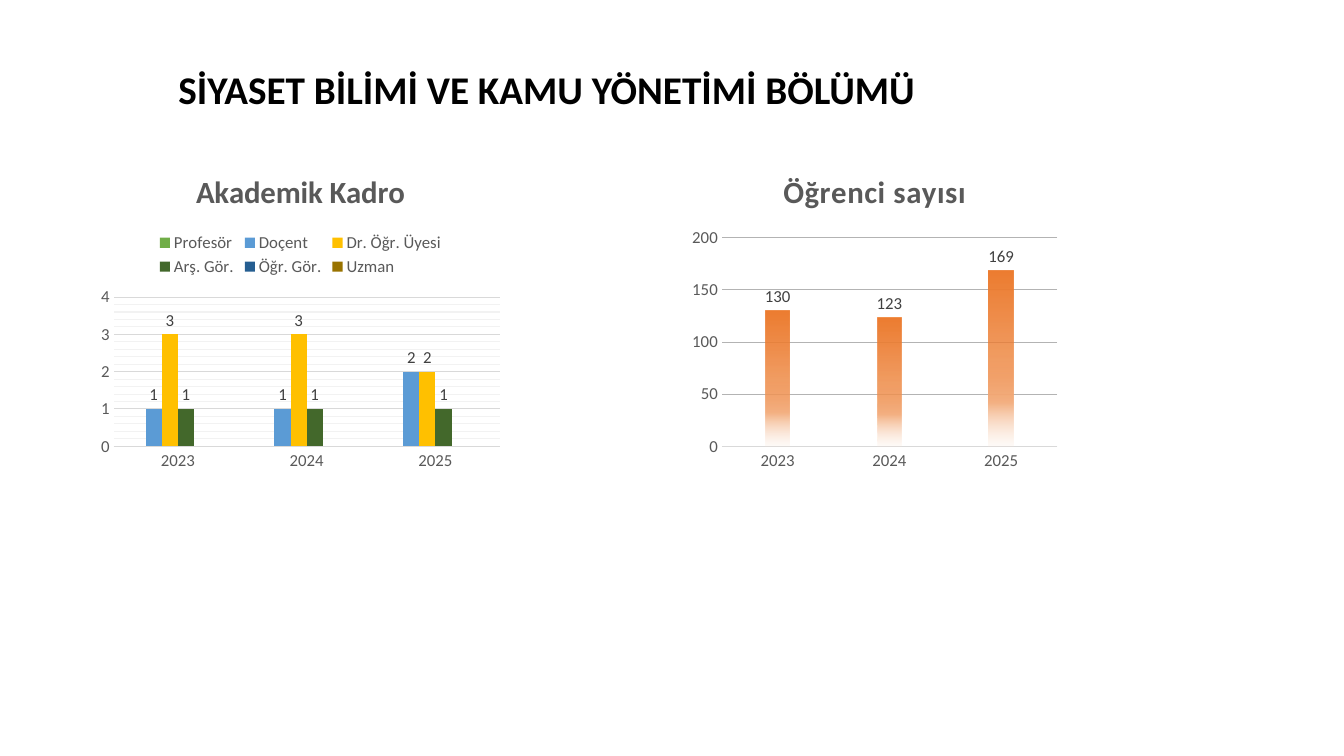
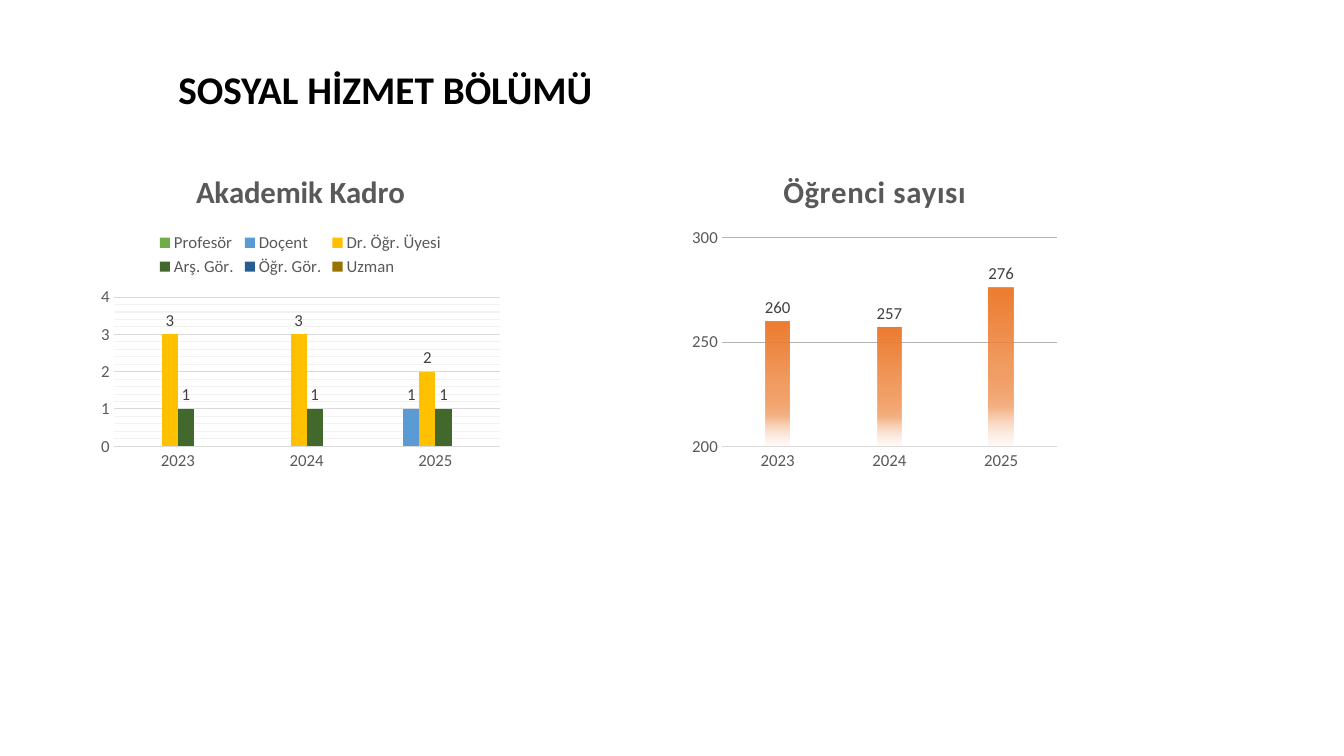
from lxml import etree
from pptx import Presentation
from pptx import util as u
from pptx.chart.data import CategoryChartData
from pptx.dml.color import RGBColor
from pptx.enum import chart as charts, text
from pptx.oxml.ns import qn

FONT = "Calibri"
COLORS = {
    "title": "000000", "axis_text": "595959", "label": "404040",
    "line": "D9D9D9", "minor": "F2F2F2", "student_grid": "B3B3B3",
}
STAFF_COLORS = {
    "Profesör": "70AD47", "Doçent": "5B9BD5", "Dr. Öğr. Üyesi": "FFC000",
    "Arş. Gör.": "43682B", "Öğr. Gör.": "255E91", "Uzman": "997300",
}
# position %, colour, opacity %
STUDENT_GRADIENT = [(0, "ED7D31", 100), (51, "ED7D31", 75),
                    (75, "F4B183", 100), (100, "FBE5D6", 15)]
YEARS = ["2023", "2024", "2025"]
DEPARTMENTS = [
    {"title": "SİYASET BİLİMİ VE KAMU YÖNETİMİ BÖLÜMÜ",
     "staff": {"Doçent": [1, 1, 2], "Dr. Öğr. Üyesi": [3, 3, 2], "Arş. Gör.": [1, 1, 1]},
     "students": [130, 123, 169], "student_range": (0, 200)},
    {"title": "SOSYAL HİZMET BÖLÜMÜ",
     "staff": {"Doçent": [None, None, 1], "Dr. Öğr. Üyesi": [3, 3, 2], "Arş. Gör.": [1, 1, 1]},
     "students": [260, 257, 276], "student_range": (200, 300)},
]


def set_font(font, size, color, bold=False):
    for name, value in {"name": FONT, "size": u.Pt(size), "bold": bold}.items():
        setattr(font, name, value)
    font.color.rgb = RGBColor.from_string(COLORS[color])


def add_columns(page, left, width, heading, series, value_range, step, grid, gap, overlap):
    """Add a titled, labelled column chart and return it."""
    data = CategoryChartData()
    data.categories = YEARS
    for name, values in series.items():
        data.add_series(name, values)
    chart = page.shapes.add_chart(
        charts.XL_CHART_TYPE.COLUMN_CLUSTERED, u.Inches(left), u.Inches(1.52),
        u.Inches(width), u.Inches(3.21), data).chart
    set_font(chart.font, 10, "title")

    chart.has_title = True
    span = chart.chart_title.text_frame.paragraphs[0].add_run()
    span.text = heading
    set_font(span.font, 22, "axis_text", bold=True)

    for axis in (chart.category_axis, chart.value_axis):
        axis.major_tick_mark = axis.minor_tick_mark = charts.XL_TICK_MARK.NONE
        set_font(axis.tick_labels.font, 12, "axis_text")
    base_line = chart.category_axis.format.line
    base_line.width = u.Pt(0.75)
    base_line.color.rgb = RGBColor.from_string(COLORS["line"])
    scale = chart.value_axis
    scale.minimum_scale, scale.maximum_scale = value_range
    scale.major_unit = step
    scale.format.line.fill.background()
    grid_line = scale.major_gridlines.format.line
    grid_line.width = u.Pt(0.75)
    grid_line.color.rgb = RGBColor.from_string(COLORS[grid])

    plot = chart.plots[0]
    plot.vary_by_categories = False
    plot.gap_width, plot.overlap = gap, overlap
    for columns in plot.series:
        columns.invert_if_negative = False
        labels = columns.data_labels
        labels.show_value = True
        labels.position = charts.XL_LABEL_POSITION.OUTSIDE_END
        set_font(labels.font, 12, "label")
    return chart


deck = Presentation()
deck.slide_width, deck.slide_height = u.Inches(13.33), u.Inches(7.5)

for department in DEPARTMENTS:
    page = deck.slides.add_slide(deck.slide_layouts[5])
    box = page.shapes.title
    for side, inches in {"left": 1.67, "top": 0.4, "width": 8.08, "height": 1.02}.items():
        setattr(box, side, u.Inches(inches))
    box.text_frame.text = department["title"]
    box.text_frame.vertical_anchor = text.MSO_ANCHOR.MIDDLE
    para = box.text_frame.paragraphs[0]
    para.alignment = text.PP_ALIGN.LEFT
    para.line_spacing = 0.9
    set_font(para.runs[0].font, 28, "title", bold=True)

    staff = {name: department["staff"].get(name, [None] * len(YEARS)) for name in STAFF_COLORS}
    staff_chart = add_columns(page, 0.92, 4.12, "Akademik Kadro", staff,
                              (0, 4), 1, "line", gap=199, overlap=0)
    for columns, color in zip(staff_chart.plots[0].series, STAFF_COLORS.values()):
        columns.format.fill.solid()
        columns.format.fill.fore_color.rgb = RGBColor.from_string(color)
    scale = staff_chart.value_axis
    scale.minor_unit = 0.2
    scale.has_minor_gridlines = True
    minor_grid = scale._element.find(qn("c:minorGridlines"))
    minor_format = etree.SubElement(minor_grid, qn("c:spPr"))
    minor_line = etree.SubElement(minor_format, qn("a:ln"), w=str(u.Pt(0.75)))
    minor_fill = etree.SubElement(minor_line, qn("a:solidFill"))
    etree.SubElement(minor_fill, qn("a:srgbClr"), val=COLORS["minor"])
    staff_chart.has_legend = True
    staff_chart.legend.position = charts.XL_LEGEND_POSITION.TOP
    staff_chart.legend.include_in_layout = False
    set_font(staff_chart.legend.font, 12, "axis_text")

    student_chart = add_columns(page, 6.79, 3.77, "Öğrenci sayısı",
                                {"Series 1": department["students"]},
                                department["student_range"], 50, "student_grid",
                                gap=355, overlap=-70)
    student_chart.has_legend = False
    heading_run = student_chart.chart_title.text_frame.paragraphs[0].runs[0]
    heading_run._r.get_or_add_rPr().set("spc", "50")
    columns = student_chart.plots[0].series[0]
    columns.format.fill.gradient()
    columns.format.fill.gradient_angle = 270
    stops = columns._element.spPr.find(".//" + qn("a:gsLst"))
    for stop in list(stops):
        stops.remove(stop)
    for position, color, opacity in STUDENT_GRADIENT:
        stop = etree.SubElement(stops, qn("a:gs"), pos=str(position * 1000))
        shade = etree.SubElement(stop, qn("a:srgbClr"), val=color)
        if opacity < 100:
            etree.SubElement(shade, qn("a:alpha"), val=str(opacity * 1000))

deck.save("out.pptx")
